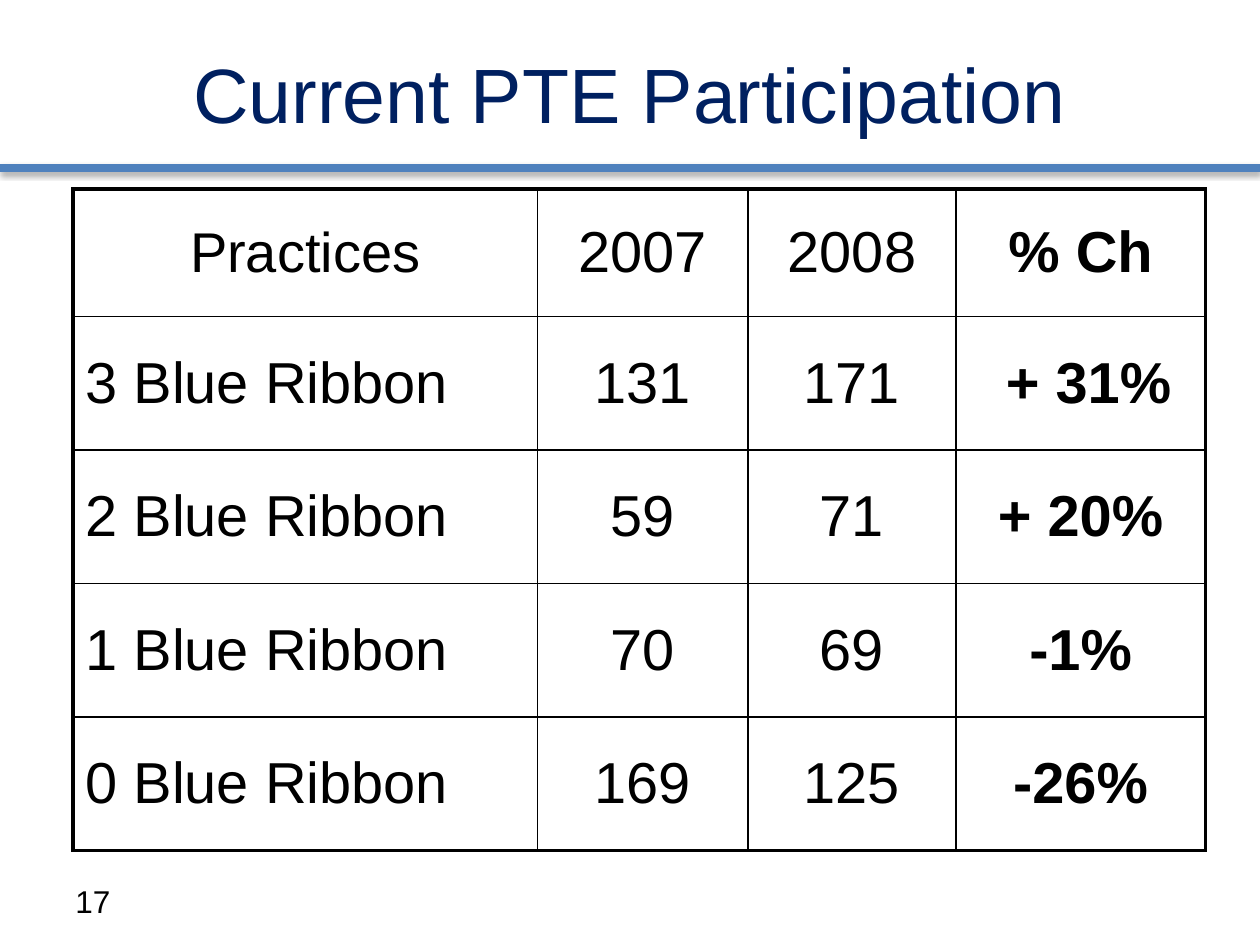
from lxml.etree import SubElement as Sub
from pptx import Presentation
from pptx.dml.color import RGBColor
from pptx.enum.shapes import MSO_CONNECTOR as Link
from pptx.enum.text import MSO_ANCHOR as Anchor, PP_ALIGN as Align
from pptx.oxml.ns import qn
from pptx.util import Cm, Pt

NAVY = RGBColor(0x00, 0x20, 0x60)
BLUE = RGBColor(0x4F, 0x81, 0xBD)
BLACK = RGBColor(0x00, 0x00, 0x00)
FACE = "Arial"
THIN, THICK = 1, 2.25
COLS = [9.37, 4.24, 4.19, 5.03]
ROWS = [2.57] + [2.69] * 4
DATA = [
    ["Practices", "2007", "2008", "% Ch"],
    ["3 Blue Ribbon", "131", "171", " + 31%"],
    ["2 Blue Ribbon", "59", "71", "+ 20%"],
    ["1 Blue Ribbon", "70", "69", "-1%"],
    ["0 Blue Ribbon", "169", "125", "-26%"],
]


def style(para, size, color, align, bold=False):
    """Set the font and alignment of a paragraph."""
    para.alignment = align
    font = para.font
    font.name, font.size, font.bold = FACE, Pt(size), bold
    font.color.rgb = color


def add_title(slide, left, top, width, height):
    """Place the title in its box."""
    title = slide.shapes.title
    title.left, title.top = Cm(left), Cm(top)
    title.width, title.height = Cm(width), Cm(height)
    frame = title.text_frame
    frame.text = "Current PTE Participation"
    frame.vertical_anchor = Anchor.MIDDLE
    style(frame.paragraphs[0], 44, NAVY, Align.CENTER)


def add_rule(slide, left, top, width):
    """Draw the shadowed rule under the title."""
    rule = slide.shapes.add_connector(
        Link.STRAIGHT, Cm(left), Cm(top), Cm(left + width), Cm(top))
    rule.line.color.rgb = BLUE
    rule.line.width = Pt(4.5)
    effects = Sub(rule._element.spPr, qn("a:effectLst"))
    shadow = Sub(effects, qn("a:outerShdw"), blurRad=str(Pt(3.1)),
                 dist=str(Pt(1.8)), dir="5400000", rotWithShape="0")
    color = Sub(shadow, qn("a:srgbClr"), val=str(BLACK))
    Sub(color, qn("a:alpha"), val="35000")


def add_edges(cell, row, col):
    """Border a cell, thicker on the outside of the table."""
    outer = {"L": col == 0, "R": col == len(COLS) - 1,
             "T": row == 0, "B": row == len(ROWS) - 1}
    props = cell._tc.get_or_add_tcPr()
    for side, thick in outer.items():
        width = Pt(THICK if thick else THIN)
        edge = Sub(props, qn(f"a:ln{side}"), w=str(width))
        fill = Sub(edge, qn("a:solidFill"))
        Sub(fill, qn("a:srgbClr"), val=str(BLACK))


def add_grid(slide, left, top):
    """Build the participation table from its top left corner."""
    table = slide.shapes.add_table(
        len(ROWS), len(COLS), Cm(left), Cm(top),
        Cm(sum(COLS)), Cm(sum(ROWS))).table
    table.first_row = table.horz_banding = False
    for col, width in zip(table.columns, COLS):
        col.width = Cm(width)
    for row, height in zip(table.rows, ROWS):
        row.height = Cm(height)
    for i, texts in enumerate(DATA):
        for j, text in enumerate(texts):
            cell = table.cell(i, j)
            add_edges(cell, i, j)
            cell.fill.background()
            cell.vertical_anchor = Anchor.MIDDLE
            cell.text = text
            align = Align.LEFT if i and not j else Align.CENTER
            size = 33 if i or j else 32
            style(cell.text_frame.paragraphs[0], size, BLACK, align,
                  j == len(COLS) - 1)


def add_number(slide, left, top, width, height):
    """Write the slide number in its box."""
    box = slide.shapes.add_textbox(
        Cm(left), Cm(top), Cm(width), Cm(height))
    frame = box.text_frame
    frame.word_wrap = True
    frame.text = "17"
    style(frame.paragraphs[0], 18, BLACK, Align.LEFT)


def main():
    """Build and save the slide."""
    deck = Presentation()
    deck.slide_width, deck.slide_height = Cm(25.4), Cm(19.05)
    slide = deck.slides.add_slide(deck.slide_layouts[5])
    add_rule(slide, 0, 3.38, 25.4)
    add_number(slide, 1.27, 17.65, 5.92, 1.02)
    add_title(slide, 1.27, 0.76, 22.86, 2.21)
    add_grid(slide, 1.47, 3.81)
    deck.save("out.pptx")


if __name__ == "__main__":
    main()
